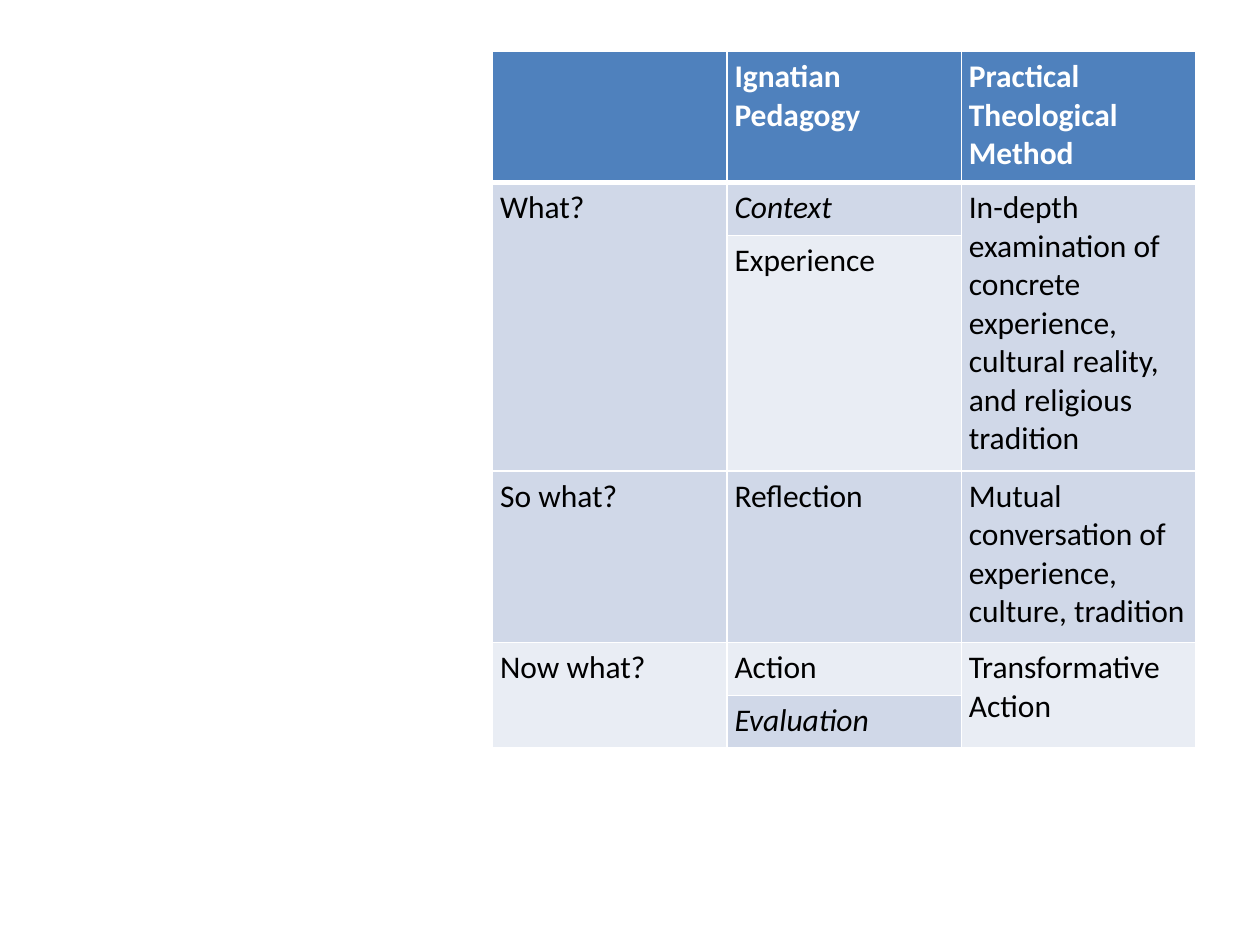
from lxml import etree
from pptx import Presentation
from pptx.dml.color import RGBColor
from pptx.oxml.ns import qn
from pptx.util import Inches, Pt

# Content: None marks a cell covered by the one above it
ROWS = [
    ("", "Ignatian Pedagogy", "Practical Theological Method"),
    ("What?", "Context", "In-depth examination of concrete experience, "
                         "cultural reality, and religious tradition"),
    (None, "Experience", None),
    ("So what?", "Reflection", "Mutual conversation of experience, culture, tradition"),
    ("Now what?", "Action", "Transformative Action"),
    (None, "Evaluation", None),
]
ITALIC = {"Context", "Evaluation"}

# Layout in inches, colours
LEFT, TOP, COLUMN_WIDTH = 3.91, 0.41, 1.86
ROW_HEIGHTS = [1.04, 0.42, 1.87, 1.36, 0.42, 0.42]
HEADER, DARK, LIGHT, WHITE, BLACK = "4F81BD", "D0D8E8", "E9EDF4", "FFFFFF", "000000"
ROW_FILLS = [HEADER, DARK, LIGHT, DARK, LIGHT, DARK]


def color(value):
    return RGBColor.from_string(value)


def set_borders(cell, top=1, bottom=1):
    properties = cell._tc.get_or_add_tcPr()
    sides = [("lnL", 1), ("lnR", 1), ("lnT", top), ("lnB", bottom)]
    for position, (side, points) in enumerate(sides):
        line = etree.Element(qn(f"a:{side}"), w=str(Pt(points)))
        fill = etree.SubElement(line, qn("a:solidFill"))
        etree.SubElement(fill, qn("a:srgbClr"), val=WHITE)
        properties.insert(position, line)


def write_cell(cell, text, *, fill, text_color=BLACK, bold=False, italic=False):
    cell.margin_left = cell.margin_right = Inches(0.06)
    cell.margin_top = cell.margin_bottom = Inches(0.05)
    cell.fill.solid()
    cell.fill.fore_color.rgb = color(fill)
    cell.text = text
    font = cell.text_frame.paragraphs[0].font
    if text:
        font = cell.text_frame.paragraphs[0].runs[0].font
    font.name, font.size = "Calibri", Pt(18)
    font.bold, font.italic = bold, italic
    font.color.rgb = color(text_color)


def main():
    presentation = Presentation()
    presentation.slide_width, presentation.slide_height = Inches(10), Inches(7.5)
    slide = presentation.slides.add_slide(presentation.slide_layouts[6])

    # Table grid
    column_count = len(ROWS[0])
    table = slide.shapes.add_table(
        len(ROWS), column_count, Inches(LEFT), Inches(TOP),
        Inches(COLUMN_WIDTH * column_count), Inches(sum(ROW_HEIGHTS))).table
    for column in table.columns:
        column.width = Inches(COLUMN_WIDTH)
    for row, height in zip(table.rows, ROW_HEIGHTS):
        row.height = Inches(height)

    # Cells, with a thick rule under the header
    for row_index, (texts, fill) in enumerate(zip(ROWS, ROW_FILLS)):
        is_header = row_index == 0
        for column_index, text in enumerate(texts):
            cell = table.cell(row_index, column_index)
            if text is None:
                table.cell(row_index - 1, column_index).merge(cell)
            write_cell(cell, text or "", fill=fill, bold=is_header,
                       text_color=WHITE if is_header else BLACK,
                       italic=text in ITALIC)
            set_borders(cell, top=3 if row_index == 1 else 1,
                        bottom=3 if is_header else 1)

    presentation.save("out.pptx")


if __name__ == "__main__":
    main()
